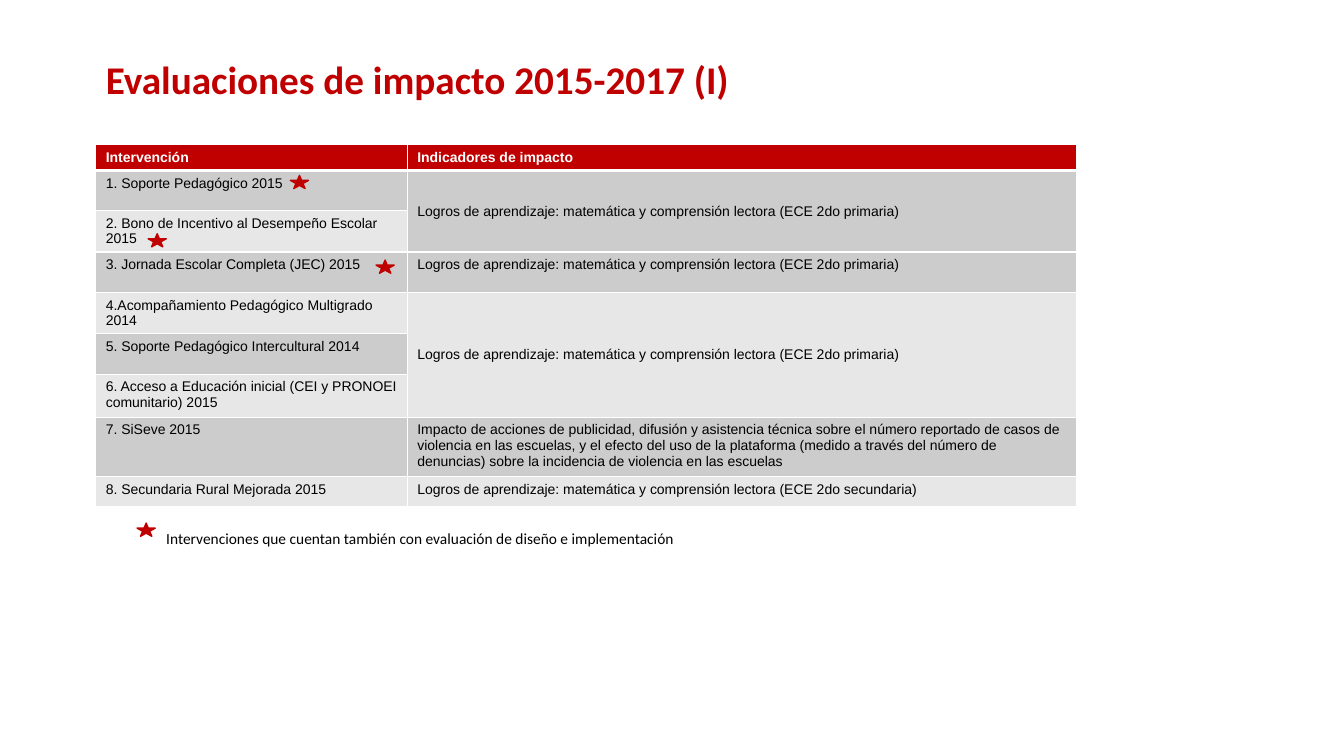
"""Build the slide on impact evaluations 2015-2017."""
import lxml.etree
import pptx
import pptx.dml.color
import pptx.enum.shapes
import pptx.enum.text
import pptx.oxml.ns
import pptx.util

Pt = pptx.util.Pt
ANCHOR = pptx.enum.text.MSO_ANCHOR
AUTO = pptx.enum.text.MSO_AUTO_SIZE
COLORS = {"red": "C00000", "white": "FFFFFF", "black": "000000",
          "dark": "CCCCCC", "light": "E7E7E7"}
LOGROS = "Logros de aprendizaje: matemática y comprensión lectora (ECE 2do {})"
PRIMARIA = LOGROS.format("primaria")
ROWS = [
    (18.5, "Intervención", "Indicadores de impacto"),
    (28.8, "1. Soporte Pedagógico 2015", PRIMARIA),
    (28.8, "2. Bono de Incentivo al Desempeño Escolar 2015", ""),
    (28.8, "3. Jornada Escolar Completa (JEC) 2015", PRIMARIA),
    (28.8, "4.Acompañamiento Pedagógico Multigrado 2014", PRIMARIA),
    (28.8, "5. Soporte Pedagógico Intercultural 2014", ""),
    (30.8, "6. Acceso a Educación inicial (CEI y PRONOEI comunitario) 2015", ""),
    (42.5, "7. SiSeve 2015",
     "Impacto de acciones de publicidad, difusión y asistencia técnica sobre el "
     "número reportado de casos de violencia en las escuelas, y el efecto del uso "
     "de la plataforma (medido a través del número de denuncias) sobre la "
     "incidencia de violencia en las escuelas"),
    (21.2, "8. Secundaria Rural Mejorada 2015", LOGROS.format("secundaria")),
]
MERGES = [(1, 2), (4, 6)]
STARS = [(207.4, 125.3), (105.8, 167), (268.6, 185.8), (97.9, 373.7)]


def rgb(name):
    """Return the named colour."""
    return pptx.dml.color.RGBColor.from_string(COLORS[name])


class Deck:
    """Hold the style and the current slide."""

    def __init__(self, prs):
        """Add a title-only slide."""
        self.s = prs.slides.add_slide(prs.slide_layouts[5])

    def style(self, p, size, font, color, bold=False):
        """Set the font of a paragraph."""
        p.font.size, p.font.name, p.font.bold = Pt(size), font, bold
        p.font.color.rgb = rgb(color)

    def title(self, text, left, top, width, height):
        """Fill and place the title."""
        sp = self.s.shapes.title
        sp.left, sp.top, sp.width, sp.height = map(Pt, (left, top, width, height))
        tf = sp.text_frame
        tf.text = text
        tf.auto_size, tf.vertical_anchor = AUTO.NONE, ANCHOR.MIDDLE
        p = tf.paragraphs[0]
        p.alignment, p.line_spacing = pptx.enum.text.PP_ALIGN.LEFT, 0.9
        self.style(p, 28, "Calibri", "red", True)

    def borders(self, cell, row):
        """Draw white borders, thicker under the header."""
        qn = pptx.oxml.ns.qn
        tc_pr = cell._tc.get_or_add_tcPr()
        for side in "LRTB":
            width = 3 if (side, row) in (("B", 0), ("T", 1)) else 1
            ln = lxml.etree.SubElement(tc_pr, qn(f"a:ln{side}"), w=str(Pt(width)))
            fill = lxml.etree.SubElement(ln, qn("a:solidFill"))
            lxml.etree.SubElement(fill, qn("a:srgbClr"), val=COLORS["white"])

    def table(self, left, top, widths, rows, merges):
        """Add the banded table and merge its indicator cells."""
        frame = self.s.shapes.add_table(
            len(rows), len(widths), Pt(left), Pt(top), Pt(sum(widths)),
            Pt(sum(row[0] for row in rows)))
        tbl = frame.table
        for col, width in zip(tbl.columns, widths):
            col.width = Pt(width)
        starts = {last: first for first, last in merges}
        bands = {row: first for first, last in merges for row in range(first, last + 1)}
        for i, (height, *texts) in enumerate(rows):
            tbl.rows[i].height = Pt(height)
            for j, text in enumerate(texts):
                cell = tbl.cell(i, j)
                band = bands.get(i, i) if j else i
                cell.text = text
                self.borders(cell, i)
                cell.fill.solid()
                cell.fill.fore_color.rgb = rgb(
                    "red" if i == 0 else "dark" if band % 2 else "light")
                self.style(cell.text_frame.paragraphs[0], 10, "Arial",
                           "black" if i else "white", i == 0)
        for last, first in starts.items():
            cell = tbl.cell(first, 1)
            cell.merge(tbl.cell(last, 1))
            cell.vertical_anchor = ANCHOR.MIDDLE

    def star(self, left, top):
        """Add a small red star."""
        sp = self.s.shapes.add_shape(
            pptx.enum.shapes.MSO_SHAPE.STAR_5_POINT, Pt(left), Pt(top), Pt(13), Pt(9.4))
        sp.shadow.inherit = False
        sp.fill.solid()
        sp.fill.fore_color.rgb = sp.line.color.rgb = rgb("red")
        sp.line.width = Pt(1)

    def caption(self, text, left, top, width, height):
        """Add the text that explains the stars."""
        tf = self.s.shapes.add_textbox(*map(Pt, (left, top, width, height))).text_frame
        tf.text = text
        tf.word_wrap, tf.auto_size = False, AUTO.SHAPE_TO_FIT_TEXT
        self.style(tf.paragraphs[0], 11, "Calibri", "black")


def main():
    """Build and save the slide."""
    prs = pptx.Presentation()
    prs.slide_width, prs.slide_height = Pt(960), Pt(540)
    deck = Deck(prs)
    deck.title("Evaluaciones de impacto 2015-2017 (I)", 68.4, 30.2, 622, 56.9)
    deck.table(68.4, 103.2, (222.5, 478.1), ROWS, MERGES)
    for left, top in STARS:
        deck.star(left, top)
    deck.caption("Intervenciones que cuentan también con evaluación de diseño e "
                 "implementación", 111.6, 374.4, 380.2, 20.9)
    prs.save("out.pptx")


if __name__ == "__main__":
    main()
